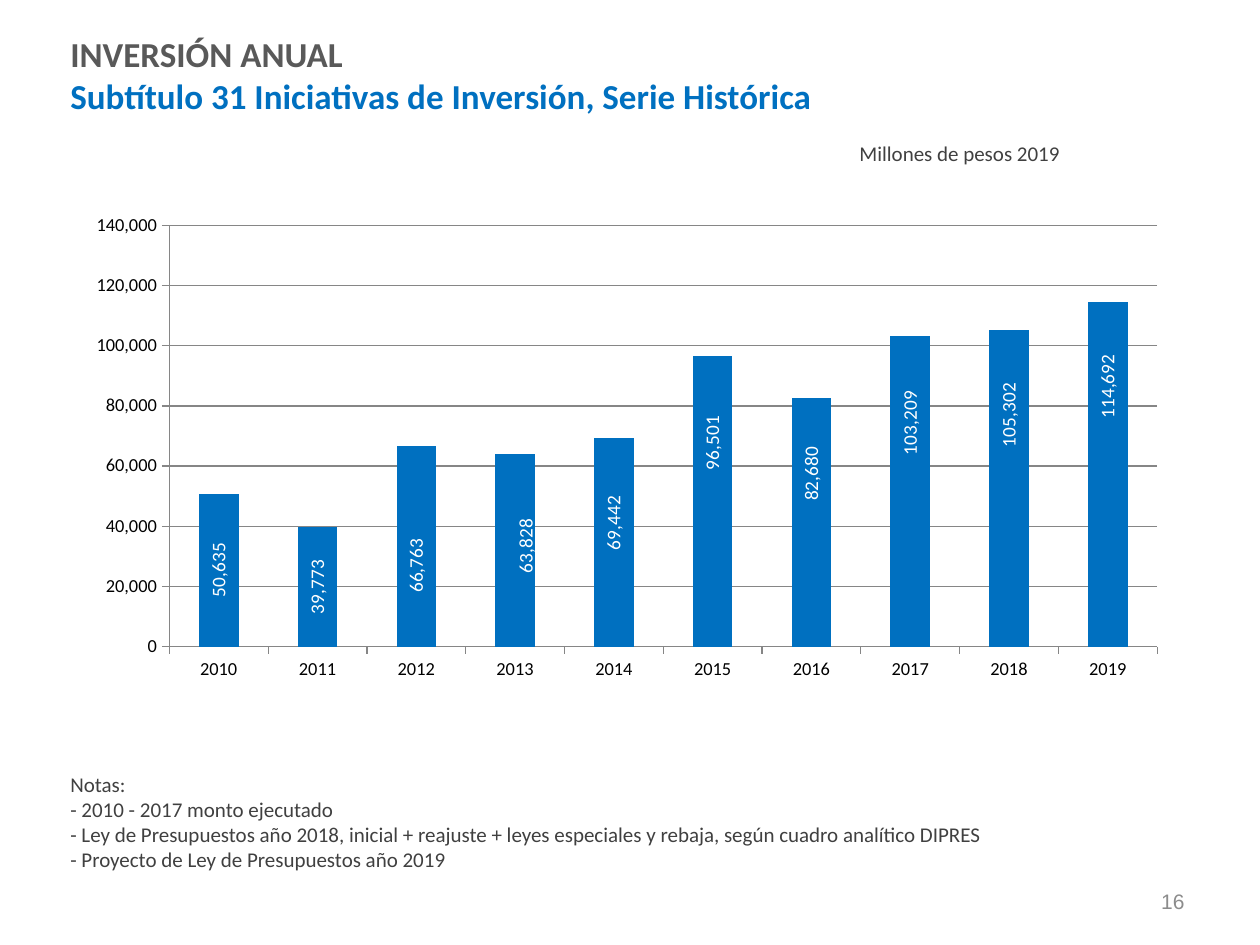
import pptx
import pptx.chart.data
import pptx.dml.color
import pptx.enum.chart
import pptx.enum.text
import pptx.oxml
import pptx.oxml.ns
import pptx.util

Inches, Pt = pptx.util.Inches, pptx.util.Pt
RGB = pptx.dml.color.RGBColor
ALIGN = pptx.enum.text.PP_ALIGN
ANCHOR = pptx.enum.text.MSO_ANCHOR
CHART = pptx.enum.chart

BLUE = RGB(0x00, 0x70, 0xC0)
DARK = RGB(0x59, 0x59, 0x59)
TEXT = RGB(0x40, 0x40, 0x40)
GRAY = RGB(0x8C, 0x8C, 0x8C)
LINE = RGB(0x86, 0x86, 0x86)
BLACK = RGB(0, 0, 0)
WHITE = RGB(255, 255, 255)

HEAD = {"name": "Calibri", "size": Pt(20), "bold": True}
BODY = {"name": "Calibri", "size": Pt(12)}
PAGE = {"name": "Arial", "size": Pt(12)}
AXIS = {"name": "Calibri", "size": Pt(10.5)}
LABEL = {"name": "Calibri", "size": Pt(11)}

NOTES = [
    "Notas:",
    "- 2010 - 2017 monto ejecutado",
    "- Ley de Presupuestos año 2018, inicial + reajuste + leyes especiales y rebaja, "
    "según cuadro analítico DIPRES",
    "- Proyecto de Ley de Presupuestos año 2019",
]
YEARS = [str(year) for year in range(2010, 2020)]
SPEND = [50635, 39773, 66763, 63828, 69442, 96501, 82680, 103209, 105302, 114692]
SHIFTS = [(0, 0), (0, 0), (0, 0.04), (0.01, -0.01), (0, -0.04),
          (0, -0.12), (0, -0.1), (0, -0.14), (0, -0.15), (0, -0.18)]


def style(font, form, color):
    """Apply a dict of font values and a colour."""
    for key, value in form.items():
        setattr(font, key, value)
    font.color.rgb = color


def add_text(slide, box, lines, form, align=ALIGN.LEFT, anchor=ANCHOR.TOP):
    """Place (text, colour) lines as paragraphs in the box."""
    frame = slide.shapes.add_textbox(*map(Inches, box)).text_frame
    frame.word_wrap = True
    frame.vertical_anchor = anchor
    for num, (text, color) in enumerate(lines):
        para = frame.add_paragraph() if num else frame.paragraphs[0]
        para.alignment = align
        run = para.add_run()
        run.text = text
        style(run.font, form, color)


def make_layout(**parts):
    """Build a manual chart layout from its named values."""
    items = "".join(f'<c:{key} val="{value}"/>' for key, value in parts.items())
    return pptx.oxml.parse_xml(
        f'<c:layout {pptx.oxml.ns.nsdecls("c")}>'
        f"<c:manualLayout>{items}</c:manualLayout></c:layout>")


def add_labels(series):
    """Put a turned value label on each bar, without leader lines."""
    for num in range(len(SHIFTS)):
        label = series.points[num].data_label
        style(label.font, LABEL, WHITE)
        label.position = CHART.XL_LABEL_POSITION.CENTER
    group = series._element.xpath("c:dLbls")[0]
    for node, (left, top) in zip(group.xpath("c:dLbl"), SHIFTS):
        if left or top:
            node.xpath("c:idx")[0].addnext(make_layout(x=left, y=top))
        body = node.xpath("c:txPr/a:bodyPr")[0]
        body.set("rot", "-5400000")
        body.set("vert", "horz")
    for leader in group.xpath("c:showLeaderLines"):
        leader.set("val", "0")


def add_bars(slide, box):
    """Place the yearly column chart in the box."""
    data = pptx.chart.data.CategoryChartData(number_format="#,##0")
    data.categories = YEARS
    data.add_series("Inversión", SPEND)
    kind = CHART.XL_CHART_TYPE.COLUMN_CLUSTERED
    chart = slide.shapes.add_chart(kind, *map(Inches, box), data).chart
    chart.has_legend = chart.has_title = False
    style(chart.font, AXIS, BLACK)
    for axis in (chart.category_axis, chart.value_axis):
        axis.major_tick_mark = CHART.XL_TICK_MARK.OUTSIDE
        axis.format.line.color.rgb = LINE
        axis.format.line.width = Pt(0.75)
    scale = chart.value_axis
    scale.minimum_scale, scale.maximum_scale, scale.major_unit = 0, 140000, 20000
    scale.tick_labels.number_format = "#,##0"
    scale.tick_labels.number_format_is_linked = False
    scale.major_gridlines.format.line.color.rgb = LINE
    scale.major_gridlines.format.line.width = Pt(0.75)
    plot = chart.plots[0]
    plot.gap_width, plot.vary_by_categories = 150, False
    series = plot.series[0]
    series.format.fill.solid()
    series.format.fill.fore_color.rgb = BLUE
    add_labels(series)
    area = chart._chartSpace.xpath("c:chart/c:plotArea")[0]
    for old in area.xpath("c:layout"):
        area.remove(old)
    area.insert(0, make_layout(layoutTarget="inner", xMode="edge", yMode="edge",
                               x=0.086, y=0.044, w=0.894, h=0.866))


def main():
    """Build the slide and save it."""
    deck = pptx.Presentation()
    deck.slide_width, deck.slide_height = Inches(10), Inches(7.5)
    slide = deck.slides.add_slide(deck.slide_layouts[6])
    add_text(slide, (7.17, 6.95, 2.33, 0.4), [("16", GRAY)], PAGE,
             ALIGN.RIGHT, ANCHOR.MIDDLE)
    add_text(slide, (0.46, 0.21, 8.9, 0.77), [
        ("INVERSIÓN ANUAL", DARK),
        ("Subtítulo 31 Iniciativas de Inversión, Serie Histórica", BLUE)], HEAD)
    add_text(slide, (6.18, 1.07, 2.33, 0.3), [("Millones de pesos 2019", TEXT)],
             BODY, ALIGN.RIGHT)
    add_text(slide, (0.46, 6.07, 9.11, 0.91), [(note, TEXT) for note in NOTES], BODY)
    add_bars(slide, (0.59, 1.62, 8.77, 3.86))
    deck.save("out.pptx")


if __name__ == "__main__":
    main()
